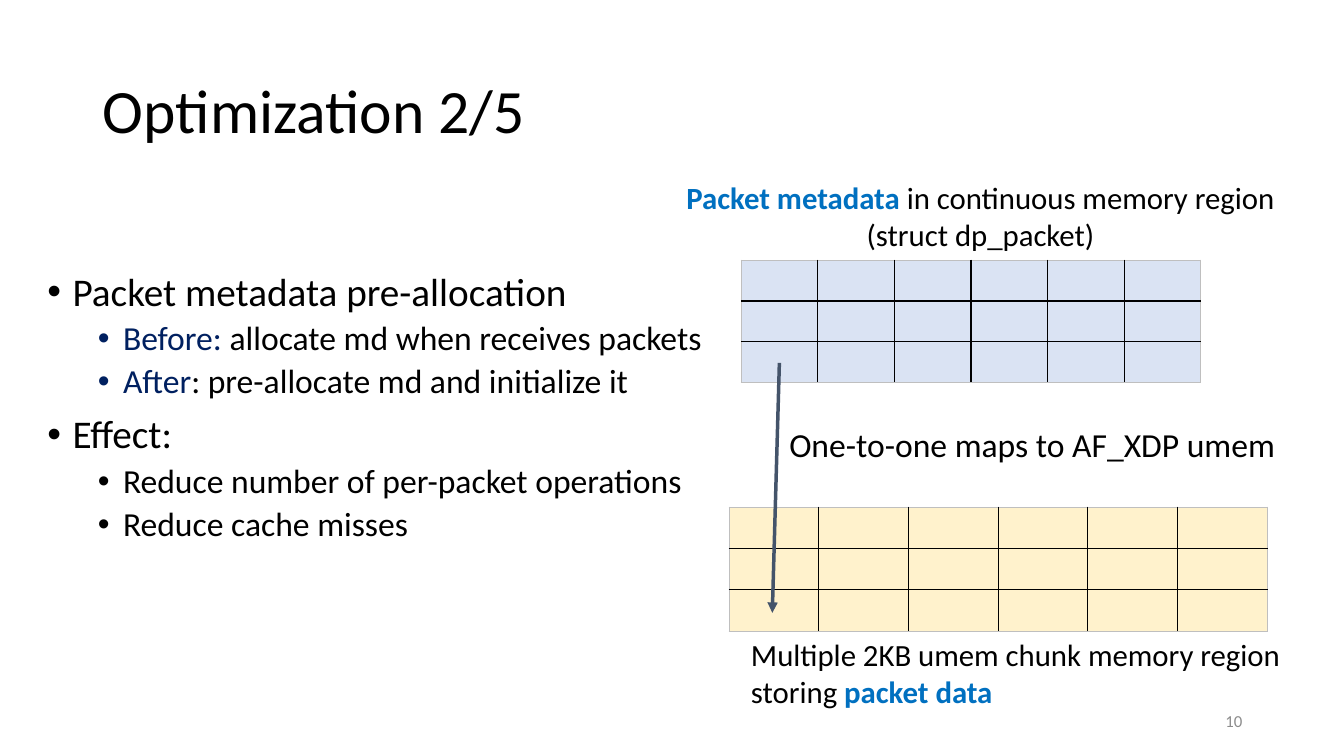
"""Builds the slide on pre-allocating packet metadata next to umem chunks."""
from dataclasses import dataclass

from lxml import etree
from pptx import Presentation
from pptx.dml.color import RGBColor
from pptx.enum.shapes import MSO_CONNECTOR
from pptx.enum.text import MSO_ANCHOR, MSO_AUTO_SIZE, PP_ALIGN
from pptx.oxml.ns import qn
from pptx.util import Emu, Pt

EMU_PER_PX = 9144
FONT = "Calibri"
BLACK, NAVY, BLUE, GREY, SLATE = "000000", "002060", "0070C0", "8C8C8C", "44546A"
EDGE = "BFBFBF"
LEFT, CENTER, RIGHT = PP_ALIGN.LEFT, PP_ALIGN.CENTER, PP_ALIGN.RIGHT
TOP, MIDDLE = MSO_ANCHOR.TOP, MSO_ANCHOR.MIDDLE
STRAIGHT = MSO_CONNECTOR.STRAIGHT
NO_FIT = MSO_AUTO_SIZE.NONE
GRID_ROWS, GRID_COLUMNS = 3, 6


@dataclass
class Piece:
    text: str
    color: str = BLACK
    bold: bool = False


@dataclass
class Line:
    pieces: list[Piece]
    align: PP_ALIGN = LEFT
    level: int = 0


@dataclass
class Label:
    box: tuple[int, int, int, int]
    size: int
    lines: list[Line]
    anchor: MSO_ANCHOR = TOP
    wrap: bool = False


@dataclass
class MemoryGrid:
    left: int
    top: int
    cell_width: int
    cell_height: int
    fill: str


BULLETS = [
    Line([Piece("Packet metadata pre-allocation")]),
    Line([Piece("Before:", NAVY), Piece(" allocate md when receives packets")], level=1),
    Line([Piece("After", NAVY), Piece(": pre-allocate md and initialize it")], level=1),
    Line([Piece("Effect:")]),
    Line([Piece("Reduce number of per-packet operations")], level=1),
    Line([Piece("Reduce cache misses")], level=1),
]
GRIDS = [
    MemoryGrid(723, 503, 89, 41, "FFF2CC"),
    MemoryGrid(735, 258, 76, 40, "DAE3F3"),
]
LABELS = [
    Label((735, 626, 551, 84), 22, [
        Line([Piece("Multiple 2KB umem chunk memory region")]),
        Line([Piece("storing "), Piece("packet data", BLUE, True)]),
    ]),
    Label((671, 172, 605, 84), 22, [
        Line([Piece("Packet metadata", BLUE, True), Piece(" in continuous memory region")]),
        Line([Piece("(struct dp_packet)")], CENTER),
    ]),
    Label((773, 416, 506, 50), 24, [Line([Piece("One-to-one maps to AF_XDP umem")])]),
    Label((942, 695, 300, 40), 12, [Line([Piece("10", GREY)], RIGHT)], MIDDLE, True),
]


def px(length: int) -> Emu:
    return Emu(length * EMU_PER_PX)


def rgb(color: str) -> RGBColor:
    return RGBColor.from_string(color)


def place(shape, left: int, top: int, width: int, height: int) -> None:
    shape.left, shape.top = px(left), px(top)
    shape.width, shape.height = px(width), px(height)


def write(paragraph, text: str, *, size: int, color: str = BLACK, bold: bool = False) -> None:
    run = paragraph.add_run()
    run.text = text
    run.font.name = FONT
    run.font.size = Pt(size)
    run.font.bold = bold
    run.font.color.rgb = rgb(color)


def paragraph_at(frame, index: int):
    return frame.paragraphs[0] if index == 0 else frame.add_paragraph()


def fill_title(title) -> None:
    place(title, 92, 40, 1150, 145)
    frame = title.text_frame
    frame.auto_size, frame.vertical_anchor = NO_FIT, MIDDLE
    heading = frame.paragraphs[0]
    heading.alignment, heading.line_spacing = LEFT, 0.9
    write(heading, "Optimization 2/5", size=44)


def fill_body(body) -> None:
    place(body, 37, 265, 682, 476)
    frame = body.text_frame
    frame.auto_size = NO_FIT
    for index, line in enumerate(BULLETS):
        bullet = paragraph_at(frame, index)
        bullet.level, bullet.line_spacing = line.level, 0.9
        bullet.space_before = Pt(5 if line.level else 10)
        properties = bullet._p.get_or_add_pPr()
        properties.set("marL", str(px(75 if line.level else 25)))
        properties.set("indent", str(px(-25)))
        etree.SubElement(properties, qn("a:buFont"), typeface="Arial")
        etree.SubElement(properties, qn("a:buChar"), char="•")
        for piece in line.pieces:
            write(bullet, piece.text, size=24 if line.level else 28, color=piece.color)


def add_label(slide, label: Label) -> None:
    frame = slide.shapes.add_textbox(*map(px, label.box)).text_frame
    frame.word_wrap, frame.vertical_anchor = label.wrap, label.anchor
    for index, line in enumerate(label.lines):
        paragraph = paragraph_at(frame, index)
        paragraph.alignment = line.align
        for piece in line.pieces:
            write(paragraph, piece.text, size=label.size, color=piece.color, bold=piece.bold)


def set_borders(cell, row: int, column: int) -> None:
    outer_sides = {
        "a:lnL": column == 0,
        "a:lnR": column == GRID_COLUMNS - 1,
        "a:lnT": row == 0,
        "a:lnB": row == GRID_ROWS - 1,
    }
    properties = cell._tc.get_or_add_tcPr()
    for position, (side, outer) in enumerate(outer_sides.items()):
        border = etree.Element(qn(side), w=str(Pt(0.5 if outer else 1)))
        solid = etree.SubElement(border, qn("a:solidFill"))
        etree.SubElement(solid, qn("a:srgbClr"), val=EDGE if outer else BLACK)
        properties.insert(position, border)


def add_grid(slide, grid: MemoryGrid) -> None:
    width, height = grid.cell_width * GRID_COLUMNS, grid.cell_height * GRID_ROWS
    table = slide.shapes.add_table(
        GRID_ROWS, GRID_COLUMNS, px(grid.left), px(grid.top), px(width), px(height)
    ).table
    table.first_row = table.horz_banding = False
    for row in range(GRID_ROWS):
        for column in range(GRID_COLUMNS):
            cell = table.cell(row, column)
            cell.fill.solid()
            cell.fill.fore_color.rgb = rgb(grid.fill)
            set_borders(cell, row, column)


def add_mapping_arrow(slide) -> None:
    arrow = slide.shapes.add_connector(STRAIGHT, px(773), px(360), px(766), px(608))
    arrow.line.color.rgb = rgb(SLATE)
    arrow.line.width = Pt(2.5)
    etree.SubElement(arrow.line._get_or_add_ln(), qn("a:tailEnd"), type="triangle")
    etree.SubElement(arrow._element.spPr, qn("a:effectLst"))


def main() -> None:
    deck = Presentation()
    deck.slide_width, deck.slide_height = px(1333), px(750)
    slide = deck.slides.add_slide(deck.slide_layouts[1])
    fill_title(slide.shapes.title)
    fill_body(slide.placeholders[1])
    for grid in GRIDS:
        add_grid(slide, grid)
    for label in LABELS:
        add_label(slide, label)
    add_mapping_arrow(slide)
    deck.save("out.pptx")


if __name__ == "__main__":
    main()
